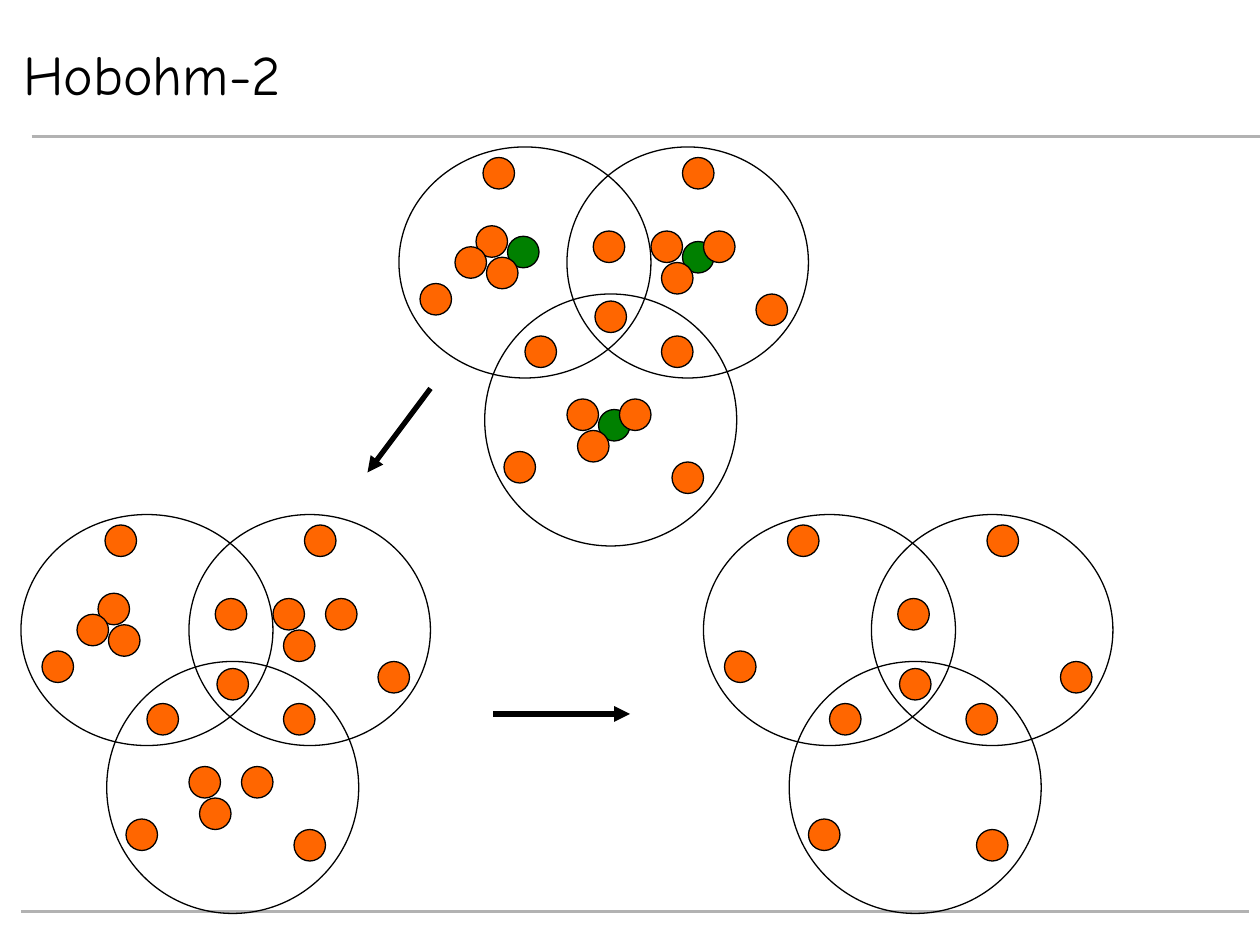
"""Build the Hobohm-2 slide with three stages of overlapping sequence sets."""
from typing import NamedTuple

import lxml.etree
import pptx
import pptx.dml.color
import pptx.enum.shapes
import pptx.enum.text
import pptx.oxml.ns
import pptx.util

Pt = pptx.util.Pt
RGBColor = pptx.dml.color.RGBColor

BLACK = RGBColor(0x00, 0x00, 0x00)
WHITE = RGBColor(0xFF, 0xFF, 0xFF)
GRAY = RGBColor(0xB2, 0xB2, 0xB2)
ORANGE = RGBColor(0xFF, 0x66, 0x00)
GREEN = RGBColor(0x00, 0x80, 0x00)

FONT = "Comic Neue"
DOT_SIZE = 18


class Point(NamedTuple):
    x: float
    y: float


class Ellipse(NamedTuple):
    x: float
    y: float
    width: float
    height: float


class Line(NamedTuple):
    start: Point
    end: Point


class Stage(NamedTuple):
    origin: Point
    selected: list[Point]
    neighbours: list[Point]
    arrow: Line | None


SETS = [Ellipse(0, 0, 144, 132), Ellipse(49, 84, 144, 144), Ellipse(96, 0, 138, 132)]
SELECTED = [Point(62, 51), Point(162, 54), Point(114, 150)]
NEIGHBOURS = [
    Point(50, 63), Point(44, 45), Point(32, 57),
    Point(150, 66), Point(144, 48), Point(174, 48),
    Point(102, 162), Point(96, 144), Point(126, 144),
]
REMAINING = [
    Point(48, 6), Point(12, 78), Point(162, 6), Point(204, 84),
    Point(60, 174), Point(156, 180), Point(111, 48), Point(112, 88),
    Point(72, 108), Point(150, 108),
]
STAGES = [
    Stage(Point(228, 84), SELECTED, NEIGHBOURS, None),
    Stage(Point(12, 294), [], NEIGHBOURS, Line(Point(246, 222), Point(210, 270))),
    Stage(Point(402, 294), [], [], Line(Point(282, 408), Point(360, 408))),
]
RULES = [
    Line(Point(18, 78), Point(720, 78)),
    Line(Point(12, 520.8), Point(714, 520.8)),
]


def draw_line(shapes, line: Line, color: RGBColor, width: float, arrow: bool = False) -> None:
    """Draw a straight connector, with an arrowhead at its end if asked."""
    connector = shapes.add_connector(
        pptx.enum.shapes.MSO_CONNECTOR.STRAIGHT,
        *(Pt(length) for point in line for length in point),
    )
    connector.line.color.rgb = color
    connector.line.width = Pt(width)
    if arrow:
        outline = connector.line._get_or_add_ln()
        lxml.etree.SubElement(outline, pptx.oxml.ns.qn("a:tailEnd"), type="triangle")
    properties = connector._element.spPr
    lxml.etree.SubElement(properties, pptx.oxml.ns.qn("a:effectLst"))


def draw_ellipse(shapes, origin: Point, ellipse: Ellipse, fill: RGBColor | None = None) -> None:
    """Draw an outlined ellipse at its offset from the origin."""
    shape = shapes.add_shape(
        pptx.enum.shapes.MSO_SHAPE.OVAL,
        Pt(origin.x + ellipse.x), Pt(origin.y + ellipse.y),
        Pt(ellipse.width), Pt(ellipse.height),
    )
    shape.shadow.inherit = False
    shape.line.color.rgb = BLACK
    shape.line.width = Pt(0.75)
    if fill is None:
        shape.fill.background()
    else:
        shape.fill.solid()
        shape.fill.fore_color.rgb = fill


def draw_stage(slide, stage: Stage) -> None:
    """Draw the sets, dots and incoming arrow of one stage as a group."""
    shapes = slide.shapes.add_group_shape().shapes
    for ellipse in SETS:
        draw_ellipse(shapes, stage.origin, ellipse)
    dots = [(point, GREEN) for point in stage.selected]
    dots += [(point, ORANGE) for point in stage.neighbours + REMAINING]
    for point, color in dots:
        draw_ellipse(shapes, stage.origin, Ellipse(*point, DOT_SIZE, DOT_SIZE), color)
    if stage.arrow:
        draw_line(shapes, stage.arrow, BLACK, 3, arrow=True)


def format_title(title, text: str) -> None:
    """Place the title placeholder and set its text."""
    title.left, title.top, title.width, title.height = Pt(6), Pt(24), Pt(564), Pt(36)
    title.fill.solid()
    title.fill.fore_color.rgb = WHITE
    title.line.color.rgb = WHITE
    title.line.width = Pt(0.75)
    text_frame = title.text_frame
    text_frame.text = text
    text_frame.auto_size = pptx.enum.text.MSO_AUTO_SIZE.NONE
    text_frame.vertical_anchor = pptx.enum.text.MSO_ANCHOR.MIDDLE
    paragraph = text_frame.paragraphs[0]
    paragraph.alignment = pptx.enum.text.PP_ALIGN.LEFT
    font = paragraph.runs[0].font
    font.name = FONT
    font.size = Pt(32)
    font.color.rgb = BLACK


def main() -> None:
    """Build and save the presentation."""
    presentation = pptx.Presentation()
    presentation.slide_width, presentation.slide_height = Pt(720), Pt(540)
    slide = presentation.slides.add_slide(presentation.slide_layouts[5])
    format_title(slide.shapes.title, "Hobohm-2")
    for rule in RULES:
        draw_line(slide.shapes, rule, GRAY, 1.5)
    for stage in STAGES:
        draw_stage(slide, stage)
    presentation.save("out.pptx")


if __name__ == "__main__":
    main()
